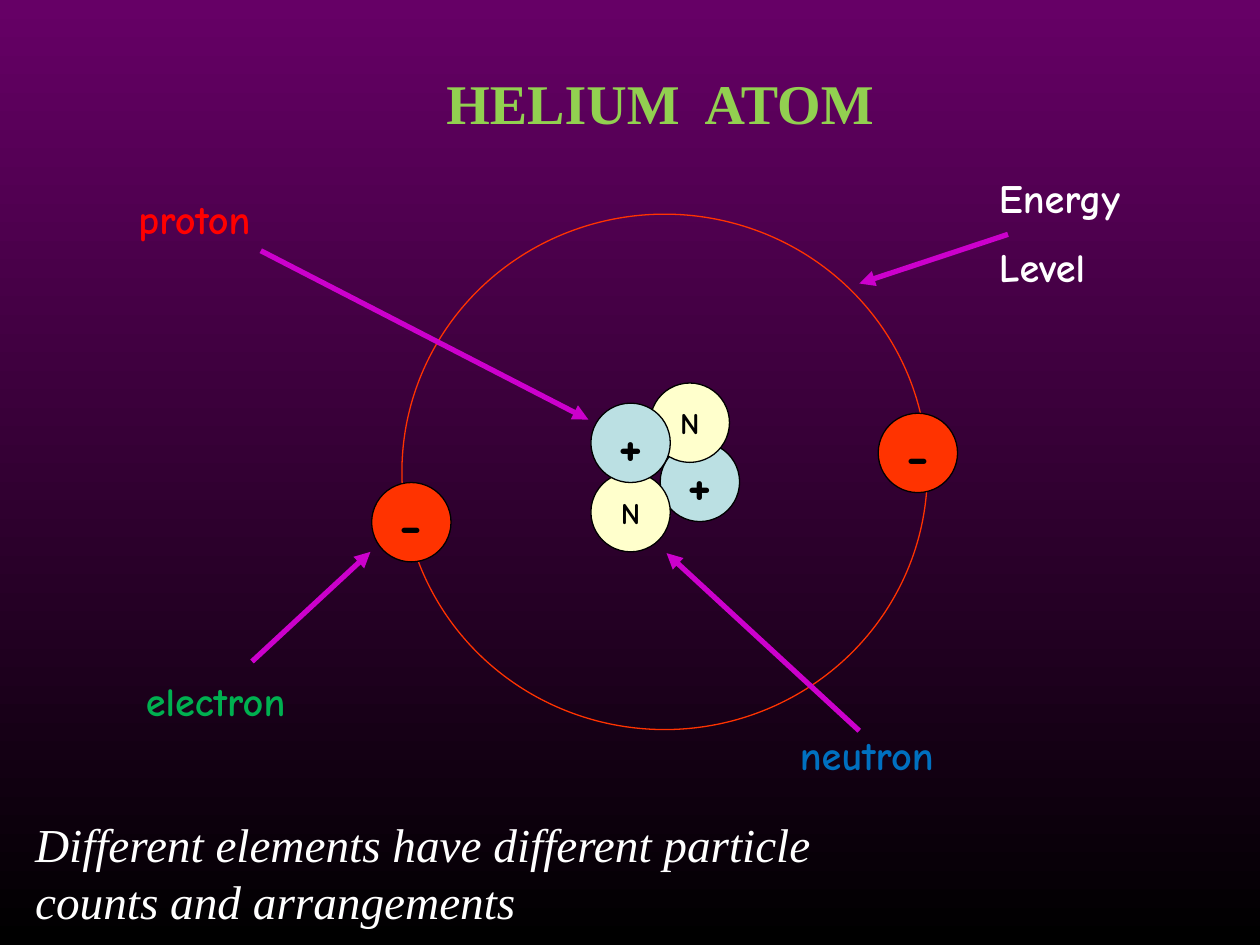
"""Build a slide showing the labelled structure of a helium atom."""
from dataclasses import dataclass

from lxml import etree
from pptx import Presentation
from pptx import util as u
from pptx.dml.color import RGBColor
from pptx.enum import shapes, text
from pptx.oxml import ns

PURPLE = RGBColor(0x66, 0x00, 0x66)
BLACK = RGBColor(0x00, 0x00, 0x00)
WHITE = RGBColor(0xFF, 0xFF, 0xFF)
ORANGE = RGBColor(0xFF, 0x33, 0x00)
PALE_BLUE = RGBColor(0xBB, 0xE0, 0xE3)
CREAM = RGBColor(0xFF, 0xFF, 0xCC)
MAGENTA = RGBColor(0xCC, 0x00, 0xCC)
LIME = RGBColor(0x92, 0xD0, 0x50)
RED = RGBColor(0xFF, 0x00, 0x00)
GREEN = RGBColor(0x00, 0xB0, 0x50)
BLUE = RGBColor(0x00, 0x70, 0xC0)

COMIC, SERIF = "Comic Neue", "Times New Roman"
DIAMETER = 0.63


@dataclass(frozen=True)
class Kind:
    symbol: str
    size: int
    fill: RGBColor


@dataclass(frozen=True)
class Particle:
    kind: Kind
    left: float
    top: float


@dataclass(frozen=True)
class Label:
    lines: tuple[str, ...]
    box: tuple[float, float, float, float]
    color: RGBColor
    size: int = 23
    name: str = COMIC
    bold: bool = True
    italic: bool = False


@dataclass(frozen=True)
class Arrow:
    start: tuple[float, float]
    end: tuple[float, float]


PROTON = Kind("+", 32, PALE_BLUE)
NEUTRON = Kind("N", 17, CREAM)
ELECTRON = Kind("-", 32, ORANGE)

PARTICLES = (
    Particle(PROTON, 5.24, 3.51),
    Particle(NEUTRON, 5.16, 3.04),
    Particle(NEUTRON, 4.69, 3.75),
    Particle(PROTON, 4.69, 3.2),
    Particle(ELECTRON, 2.95, 3.83),
    Particle(ELECTRON, 6.97, 3.28),
)
TITLE = Label(("HELIUM  ATOM",), (3.4, 0.49, 3.68, 0.64), LIME, 32, SERIF)
LABELS = (
    Label(("proton",), (1, 1.49, 1.34, 0.49), RED),
    Label(("electron",), (1.06, 5.32, 1.58, 0.49), GREEN),
    Label(("neutron",), (6.25, 5.75, 1.81, 0.49), BLUE),
    Label(("Energy", "Level"), (7.83, 1.33, 1.43, 1.07), WHITE),
    Label(("Different elements have different particle counts and arrangements",),
          (0.18, 6.42, 7.42, 1.01), WHITE, 27, SERIF, bold=False, italic=True),
)
ARROWS = (
    Arrow((2.07, 1.99), (4.67, 3.33)),
    Arrow((2, 5.25), (2.94, 4.38)),
    Arrow((6.82, 5.8), (5.29, 4.39)),
    Arrow((8, 1.86), (6.82, 2.25)),
)


def set_attrs(obj, values: dict) -> None:
    """Set every named attribute on an object."""
    for name, value in values.items():
        setattr(obj, name, value)


def add_run(p, wording: str, color: RGBColor, **font) -> None:
    """Add a formatted run to a paragraph."""
    r = p.add_run()
    r.text = wording
    set_attrs(r.font, font)
    r.font.color.rgb = color


def fill_label(sp, label: Label, align: text.PP_ALIGN) -> None:
    """Place a text shape and write the lines of its label."""
    set_attrs(sp, dict(zip(("left", "top", "width", "height"), map(u.Inches, label.box))))
    tf = sp.text_frame
    set_attrs(tf, {"word_wrap": True, "auto_size": text.MSO_AUTO_SIZE.NONE,
                   "vertical_anchor": text.MSO_ANCHOR.TOP})
    for i, line in enumerate(label.lines):
        p = tf.add_paragraph() if i else tf.paragraphs[0]
        p.alignment = align
        p.space_before = u.Pt(label.size / 2 if i else 0)
        add_run(p, line, label.color, size=u.Pt(label.size), name=label.name,
                bold=label.bold, italic=label.italic)


def add_circle(s, left: float, top: float, width: float, height: float, line: RGBColor):
    """Add an unfilled ellipse with a thin outline."""
    sp = s.shapes.add_shape(shapes.MSO_SHAPE.OVAL, *map(u.Inches, (left, top, width, height)))
    sp.shadow.inherit = False
    sp.fill.background()
    sp.line.color.rgb = line
    sp.line.width = u.Pt(0.75)
    return sp


def add_particle(s, particle: Particle) -> None:
    """Add a filled circle carrying the particle's symbol."""
    kind = particle.kind
    sp = add_circle(s, particle.left, particle.top, DIAMETER, DIAMETER, BLACK)
    sp.fill.solid()
    sp.fill.fore_color.rgb = kind.fill
    tf = sp.text_frame
    set_attrs(tf, {"word_wrap": False, "vertical_anchor": text.MSO_ANCHOR.MIDDLE})
    p = tf.paragraphs[0]
    p.alignment = text.PP_ALIGN.CENTER
    add_run(p, kind.symbol, BLACK, size=u.Pt(kind.size), name=COMIC, bold=True)


def add_arrow(s, arrow: Arrow) -> None:
    """Add a straight arrow with a triangular head."""
    c = s.shapes.add_connector(shapes.MSO_CONNECTOR.STRAIGHT,
                               *map(u.Inches, arrow.start + arrow.end))
    c.line.color.rgb = MAGENTA
    c.line.width = u.Pt(3)
    properties = c._element.spPr
    etree.SubElement(properties.find(ns.qn("a:ln")), ns.qn("a:tailEnd"), type="triangle")
    etree.SubElement(properties, ns.qn("a:effectLst"))


def paint_background(s) -> None:
    """Fill the slide from purple at the top to black at the bottom."""
    fill = s.background.fill
    fill.gradient()
    fill.gradient_angle = 270
    for stop, position, color in zip(fill.gradient_stops, (0, 1), (PURPLE, BLACK)):
        stop.position = position
        stop.color.rgb = color


def main() -> None:
    """Assemble and save the slide."""
    prs = Presentation()
    set_attrs(prs, {"slide_width": u.Inches(10), "slide_height": u.Inches(7.5)})
    s = prs.slides.add_slide(prs.slide_layouts[5])
    paint_background(s)
    fill_label(s.shapes.title, TITLE, text.PP_ALIGN.CENTER)
    add_circle(s, 3.19, 1.7, 4.17, 4.09, ORANGE)
    for particle in PARTICLES:
        add_particle(s, particle)
    for label in LABELS:
        sp = s.shapes.add_textbox(*map(u.Inches, label.box))
        fill_label(sp, label, text.PP_ALIGN.LEFT)
    for arrow in ARROWS:
        add_arrow(s, arrow)
    prs.save("out.pptx")


if __name__ == "__main__":
    main()
